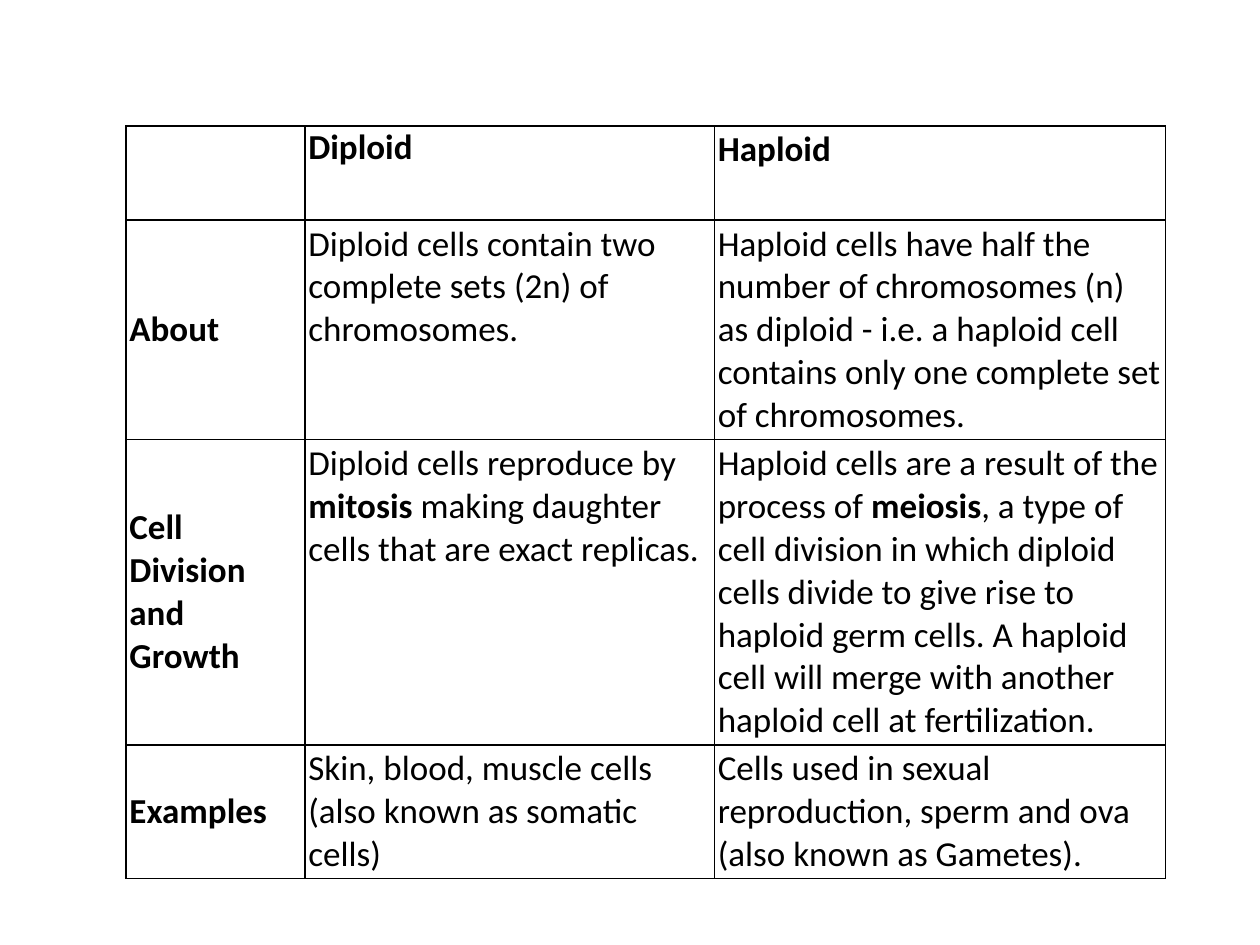
from lxml import etree
from pptx import Presentation
from pptx.dml.color import RGBColor
from pptx.enum import text
from pptx.oxml import ns
from pptx.util import Pt

BLACK = RGBColor(0, 0, 0)
WHITE = RGBColor(255, 255, 255)

COLUMN_WIDTHS = (102.2, 234, 257.8)
ROW_HEIGHTS = (53.8, 125.1, 173.8, 75.9)

# Each cell is a list of (wording, bold) runs
COMPARISON = [
    [[], [("Diploid", True)], [("Haploid", True)]],
    [
        [("About", True)],
        [("Diploid cells contain two complete sets (2n) of chromosomes.", False)],
        [("Haploid cells have half the number of chromosomes (n) as diploid - "
          "i.e. a haploid cell contains only one complete set of chromosomes.", False)],
    ],
    [
        [("Cell Division and Growth", True)],
        [("Diploid cells reproduce by ", False), ("mitosis", True),
         (" making daughter cells that are exact replicas.", False)],
        [("Haploid cells are a result of the process of ", False), ("meiosis", True),
         (", a type of cell division in which diploid cells divide to give rise to "
          "haploid germ cells. A haploid cell will merge with another haploid cell "
          "at fertilization.", False)],
    ],
    [
        [("Examples", True)],
        [("Skin, blood, muscle cells (also known as somatic cells)", False)],
        [("Cells used in sexual reproduction, sperm and ova "
          "(also known as Gametes).", False)],
    ],
]


def add_text(paragraph, wording, *, bold=False, size=20, font="Calibri", color=BLACK):
    run = paragraph.add_run()
    run.text = wording
    run.font.name = font
    run.font.size = Pt(size)
    run.font.bold = bold
    run.font.color.rgb = color


def add_borders(cell, color=BLACK, width=1):
    properties = cell._tc.get_or_add_tcPr()
    for position, side in enumerate(("lnL", "lnR", "lnT", "lnB")):
        line = etree.Element(ns.qn(f"a:{side}"), w=str(Pt(width)))
        fill = etree.SubElement(line, ns.qn("a:solidFill"))
        etree.SubElement(fill, ns.qn("a:srgbClr"), val=str(color))
        properties.insert(position, line)


def set_margins(cell, left, top, right, bottom):
    cell.margin_left, cell.margin_top = Pt(left), Pt(top)
    cell.margin_right, cell.margin_bottom = Pt(right), Pt(bottom)


def add_comparison_table(slide, left, top):
    frame = slide.shapes.add_table(
        len(ROW_HEIGHTS), len(COLUMN_WIDTHS), Pt(left), Pt(top),
        Pt(sum(COLUMN_WIDTHS)), Pt(sum(ROW_HEIGHTS)))
    table = frame.table
    table.first_row = table.horz_banding = False
    for column, width in zip(table.columns, COLUMN_WIDTHS):
        column.width = Pt(width)
    for row, height in zip(table.rows, ROW_HEIGHTS):
        row.height = Pt(height)

    for row_index, cells in enumerate(COMPARISON):
        for column_index, runs in enumerate(cells):
            cell = table.cell(row_index, column_index)
            cell.fill.solid()
            cell.fill.fore_color.rgb = WHITE
            add_borders(cell)
            set_margins(cell, 2, 1.5, 2, 1.5)
            # Row labels are centred vertically
            if column_index == 0:
                cell.vertical_anchor = text.MSO_ANCHOR.MIDDLE
            for wording, bold in runs:
                add_text(cell.text_frame.paragraphs[0], wording, bold=bold)

    # The Diploid heading sits closer to the top
    set_margins(table.cell(0, 1), 2, 0, 2, 5)


def main():
    presentation = Presentation()
    presentation.slide_width, presentation.slide_height = Pt(720), Pt(540)
    slide = presentation.slides.add_slide(presentation.slide_layouts[6])
    add_comparison_table(slide, 72, 72)
    presentation.save("out.pptx")


if __name__ == "__main__":
    main()
